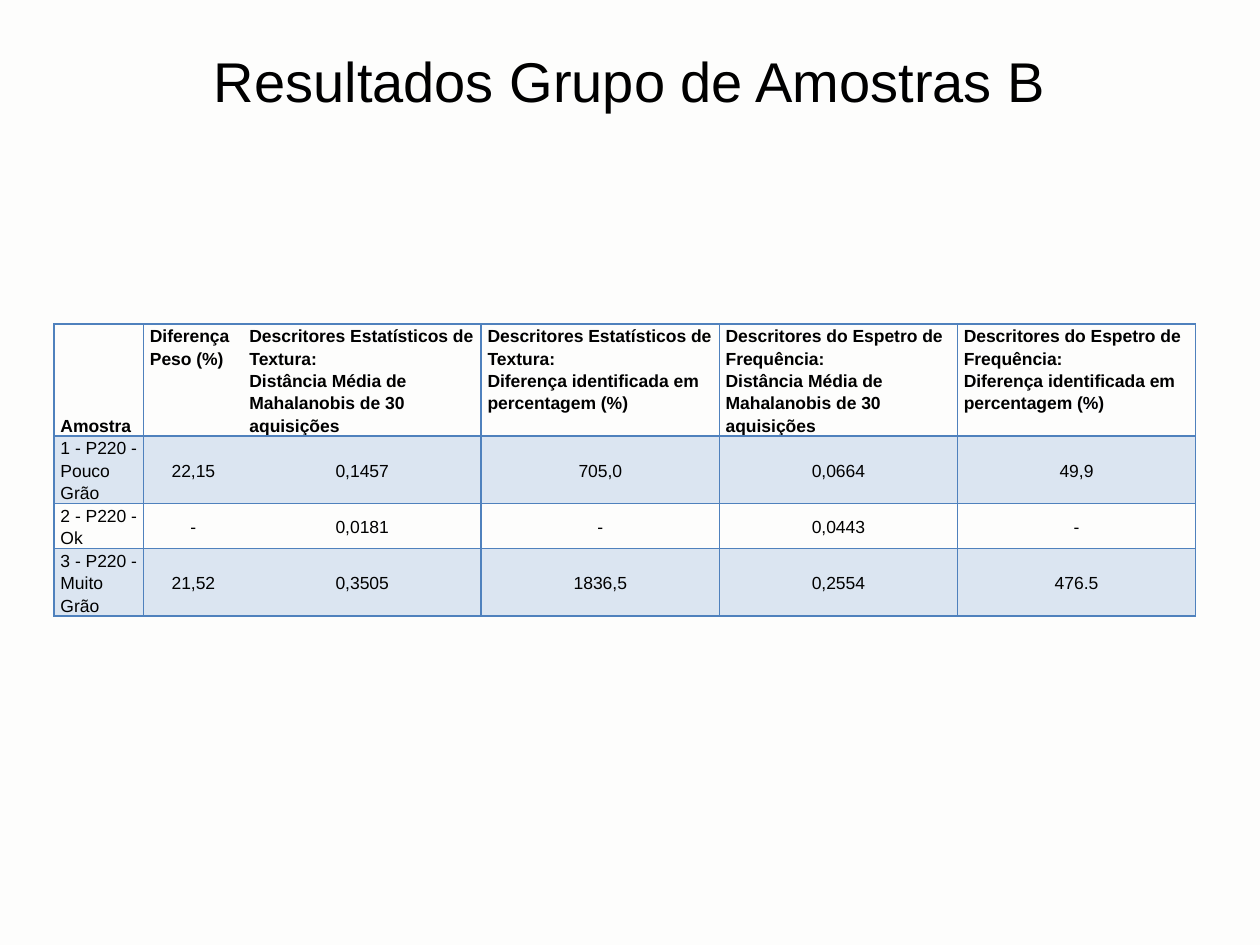
import pptx
import pptx.dml.color
import pptx.enum.text
import pptx.util
from lxml import etree
from pptx.oxml.ns import qn

BLACK = pptx.dml.color.RGBColor(0x00, 0x00, 0x00)
BORDER = pptx.dml.color.RGBColor(0x4F, 0x81, 0xBD)
BAND = pptx.dml.color.RGBColor(0xDB, 0xE5, 0xF1)
PAPER = pptx.dml.color.RGBColor(0xFD, 0xFD, 0xFC)

ANCHOR = pptx.enum.text.MSO_ANCHOR
ALIGN = pptx.enum.text.PP_ALIGN
Inches = pptx.util.Inches

TEXTURE = "Descritores Estatísticos de Textura:\n"
SPECTRUM = "Descritores do Espetro de Frequência:\n"
DISTANCE = "Distância Média de Mahalanobis de 30 aquisições"
DIFFERENCE = "Diferença identificada em percentagem (%)"
ROWS = [
    ["Amostra", "Diferença Peso (%)", TEXTURE + DISTANCE, TEXTURE + DIFFERENCE,
     SPECTRUM + DISTANCE, SPECTRUM + DIFFERENCE],
    ["1 - P220 - Pouco Grão", "22,15", "0,1457", "705,0", "0,0664", "49,9"],
    ["2 - P220 - Ok", "-", "0,0181", "-", "0,0443", "-"],
    ["3 - P220 - Muito Grão", "21,52", "0,3505", "1836,5", "0,2554", "476.5"],
]
COLUMN_WIDTHS = [0.71, 0.79] + [1.89] * 4
ROW_HEIGHTS = [0.83, 0.49, 0.32, 0.49]


def format_text(paragraph, size, bold=False):
    for run in paragraph.runs:
        run.font.name = "Arial"
        run.font.size = pptx.util.Pt(size)
        run.font.bold = bold
        run.font.color.rgb = BLACK


def add_border(cell, side, visible):
    properties = cell._tc.get_or_add_tcPr()
    line = etree.SubElement(properties, qn("a:ln" + side), w=str(pptx.util.Pt(1)))
    if visible:
        fill = etree.SubElement(line, qn("a:solidFill"))
        etree.SubElement(fill, qn("a:srgbClr"), val=str(BORDER))
    else:
        etree.SubElement(line, qn("a:noFill"))


presentation = pptx.Presentation()
presentation.slide_width = Inches(10)
presentation.slide_height = Inches(7.5)
slide = presentation.slides.add_slide(presentation.slide_layouts[6])
slide.background.fill.solid()
slide.background.fill.fore_color.rgb = PAPER

table = slide.shapes.add_table(
    len(ROWS), len(COLUMN_WIDTHS), Inches(0.43), Inches(2.57),
    Inches(sum(COLUMN_WIDTHS)), Inches(sum(ROW_HEIGHTS))).table
table.first_row = False
table.horz_banding = False
for column, width in zip(table.columns, COLUMN_WIDTHS):
    column.width = Inches(width)
for row, height in zip(table.rows, ROW_HEIGHTS):
    row.height = Inches(height)

for row_index, texts in enumerate(ROWS):
    for column_index, text in enumerate(texts):
        header = row_index == 0
        label = column_index == 0
        cell = table.cell(row_index, column_index)
        cell.margin_left = cell.margin_right = Inches(0.05)
        cell.margin_top = cell.margin_bottom = 0
        if label:
            cell.vertical_anchor = ANCHOR.BOTTOM
        else:
            cell.vertical_anchor = ANCHOR.TOP if header else ANCHOR.MIDDLE
        cell.text_frame.text = text
        for paragraph in cell.text_frame.paragraphs:
            paragraph.alignment = ALIGN.LEFT if header or label else ALIGN.CENTER
            paragraph.line_spacing = 1.15
            format_text(paragraph, 10, header)
        for side in "LRTB":
            add_border(cell, side, (column_index, side) not in [(1, "R"), (2, "L")])
        if row_index % 2:
            cell.fill.solid()
            cell.fill.fore_color.rgb = BAND
        else:
            cell.fill.background()

title = slide.shapes.add_textbox(Inches(0.67), Inches(0.21), Inches(8.66), Inches(0.86))
title.text_frame.word_wrap = True
title.text_frame.vertical_anchor = ANCHOR.MIDDLE
title.text_frame.text = "Resultados Grupo de Amostras B"
paragraph = title.text_frame.paragraphs[0]
paragraph.alignment = ALIGN.CENTER
format_text(paragraph, 32)

presentation.save("out.pptx")
